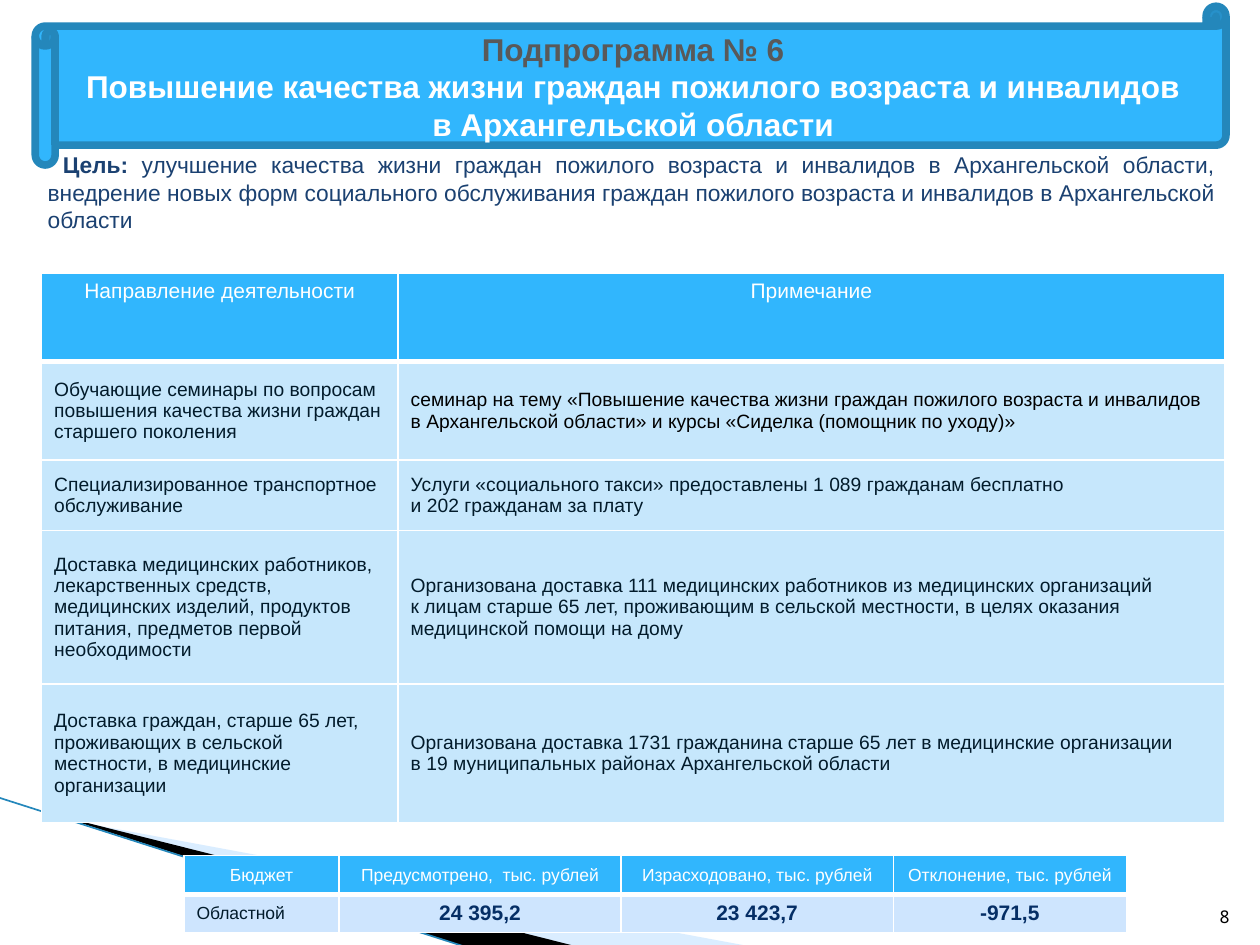
from dataclasses import dataclass
from typing import Optional

from lxml import etree
from pptx import Presentation
from pptx import util as u
from pptx.dml.color import RGBColor
from pptx.enum import shapes, text
from pptx.oxml.ns import qn


@dataclass(frozen=True)
class Theme:
    font: str = "Arial"
    number_font: str = "Noto Sans Mono"
    white: str = "FFFFFF"
    black: str = "000000"
    blue: str = "31B6FD"
    blue_edge: str = "2487BB"
    pale_blue: str = "C6E7FC"
    pale_budget: str = "CEE5FE"
    wedge: str = "A3D3FF"
    wedge_line: str = "99D0FF"
    grey: str = "595959"
    body: str = "021B2B"
    goal: str = "1B4171"
    amount: str = "052E65"
    title_size: float = 18
    goal_size: float = 13
    head_size: float = 12
    body_size: float = 11
    small_size: float = 10


T = Theme()
CENTER, LEFT = text.PP_ALIGN.CENTER, text.PP_ALIGN.LEFT
MIDDLE, TOP = text.MSO_ANCHOR.MIDDLE, text.MSO_ANCHOR.TOP


@dataclass(frozen=True)
class CellStyle:
    fill: str
    color: str
    size: float
    align: text.PP_ALIGN = LEFT
    anchor: text.MSO_ANCHOR = MIDDLE
    bold: bool = False
    bottom: float = 1


@dataclass(frozen=True)
class Cell:
    words: str
    style: CellStyle


@dataclass(frozen=True)
class Grid:
    left: float
    top: float
    cols: list[float]
    heights: list[float]
    rows: list[list[Cell]]


@dataclass(frozen=True)
class Wedge:
    points: list[tuple[float, float]]
    color: str
    alpha: Optional[int] = None


def rgb(color: str) -> RGBColor:
    return RGBColor.from_string(color)


def set_font(font, size: float, color: str, bold: bool = False, name: str = T.font) -> None:
    font.name, font.size, font.bold = name, u.Pt(size), bold
    font.color.rgb = rgb(color)


def draw_wedge(s, wedge: Wedge) -> None:
    pts = [(u.Inches(x), u.Inches(y)) for x, y in wedge.points]
    builder = s.shapes.build_freeform(*pts[0])
    builder.add_line_segments(pts[1:], close=True)
    sp = builder.convert_to_shape()
    sp.shadow.inherit = False
    sp.fill.solid()
    sp.fill.fore_color.rgb = rgb(wedge.color)
    sp.line.fill.background()
    if wedge.alpha is not None:
        clr = sp.element.spPr.find(qn("a:solidFill")).find(qn("a:srgbClr"))
        etree.SubElement(clr, qn("a:alpha"), val=str(wedge.alpha * 1000))


def set_borders(cell, bottom: float) -> None:
    tcPr = cell._tc.get_or_add_tcPr()
    for side, width in (("L", 1), ("R", 1), ("T", 1), ("B", bottom)):
        ln = etree.SubElement(tcPr, qn(f"a:ln{side}"), w=str(u.Pt(width)))
        fill = etree.SubElement(ln, qn("a:solidFill"))
        etree.SubElement(fill, qn("a:srgbClr"), val=T.white)


def draw_grid(s, grid: Grid) -> None:
    frame = s.shapes.add_table(
        len(grid.rows), len(grid.cols), u.Inches(grid.left), u.Inches(grid.top),
        u.Inches(sum(grid.cols)), u.Inches(sum(grid.heights)))
    table = frame.table
    for col, width in zip(table.columns, grid.cols):
        col.width = u.Inches(width)
    for row, height, items in zip(table.rows, grid.heights, grid.rows):
        row.height = u.Inches(height)
        for cell, item in zip(row.cells, items):
            style = item.style
            set_borders(cell, style.bottom)
            cell.fill.solid()
            cell.fill.fore_color.rgb = rgb(style.fill)
            cell.vertical_anchor = style.anchor
            p = cell.text_frame.paragraphs[0]
            p.text = item.words
            p.alignment = style.align
            set_font(p.font, style.size, style.color, style.bold)


HEAD = CellStyle(T.blue, T.white, T.head_size, CENTER, TOP, bottom=3)
BODY = CellStyle(T.pale_blue, T.body, T.body_size)
BLACK_BODY = CellStyle(T.pale_blue, T.black, T.body_size)
BUDGET_HEAD = CellStyle(T.blue, T.white, T.small_size, CENTER, bottom=3)
BUDGET_NAME = CellStyle(T.pale_budget, T.body, T.small_size)
AMOUNT = CellStyle(T.pale_budget, T.amount, T.head_size, CENTER, bold=True)

WEDGES = [
    Wedge([(0.55, 6.51), (5.95, 7.51), (4.56, 7.51), (0.55, 6.5)], T.wedge, 40),
    Wedge([(0.53, 6.49), (4.57, 7.51), (3.72, 7.52), (0.54, 6.5)], T.black),
]
TITLE = [
    ("Подпрограмма № 6", T.grey),
    ("Повышение качества жизни граждан пожилого возраста и инвалидов", T.white),
    ("в Архангельской области", T.white),
]
ACTIVITIES = Grid(0.33, 2.17, [2.83, 6.56], [0.7, 0.78, 0.56, 1.22, 1.1], [
    [Cell("Направление деятельности", HEAD), Cell("Примечание", HEAD)],
    [Cell("Обучающие семинары по вопросам повышения качества жизни граждан старшего поколения", BODY),
     Cell("семинар на тему «Повышение качества жизни граждан пожилого возраста и инвалидов "
          "в Архангельской области» и курсы «Сиделка (помощник по уходу)»", BLACK_BODY)],
    [Cell("Специализированное транспортное обслуживание", BODY),
     Cell("Услуги «социального такси» предоставлены 1 089 гражданам бесплатно\n"
          "и 202 гражданам за плату", BODY)],
    [Cell("Доставка медицинских работников, лекарственных средств, медицинских изделий, "
          "продуктов питания, предметов первой необходимости", BODY),
     Cell("Организована доставка 111 медицинских работников из медицинских организаций\n"
          "к лицам старше 65 лет, проживающим в сельской местности, в целях оказания "
          "медицинской помощи на дому", BODY)],
    [Cell("Доставка граждан, старше 65 лет, проживающих в сельской местности, "
          "в медицинские организации", BODY),
     Cell("Организована доставка 1731 гражданина старше 65 лет в медицинские организации\n"
          "в 19 муниципальных районах Архангельской области", BODY)],
])
BUDGET = Grid(1.46, 6.79, [1.23, 2.24, 2.16, 1.85], [0.31, 0.3], [
    [Cell(words, BUDGET_HEAD) for words in (
        "Бюджет", "Предусмотрено,  тыс. рублей", "Израсходовано, тыс. рублей",
        "Отклонение, тыс. рублей")],
    [Cell("Областной", BUDGET_NAME)]
    + [Cell(words, AMOUNT) for words in ("24 395,2", "23 423,7", "-971,5")],
])


def main() -> None:
    prs = Presentation()
    prs.slide_width, prs.slide_height = u.Inches(10), u.Inches(7.5)
    s = prs.slides.add_slide(prs.slide_layouts[5])

    # Corner decoration
    for wedge in WEDGES:
        draw_wedge(s, wedge)
    edge = s.shapes.add_connector(
        shapes.MSO_CONNECTOR.STRAIGHT, u.Inches(-0.01), u.Inches(6.33), u.Inches(3.71), u.Inches(7.52))
    edge.line.color.rgb = rgb(T.blue_edge)
    edge.line.width = u.Pt(0.95)
    etree.SubElement(edge.element.spPr, qn("a:effectLst"))

    # Scroll banner with the title on it
    scroll = s.shapes.add_shape(
        shapes.MSO_SHAPE.HORIZONTAL_SCROLL, u.Inches(0.28), u.Inches(0.05), u.Inches(9.45), u.Inches(1.26))
    scroll.shadow.inherit = False
    scroll.fill.solid()
    scroll.fill.fore_color.rgb = rgb(T.blue)
    scroll.line.color.rgb = rgb(T.blue_edge)
    scroll.line.width = u.Pt(4.33)
    title = s.shapes.title
    scroll.element.addnext(title.element)
    title.left, title.top = u.Inches(0.44), u.Inches(0.21)
    title.width, title.height = u.Inches(9.17), u.Inches(0.95)
    tf = title.text_frame
    tf.margin_top = tf.margin_bottom = 0
    tf.vertical_anchor = MIDDLE
    tf.auto_size = text.MSO_AUTO_SIZE.NONE
    tf.text = "\n".join(words for words, _ in TITLE)
    for p, (_, color) in zip(tf.paragraphs, TITLE):
        p.alignment = CENTER
        set_font(p.font, T.title_size, color, True)

    # Goal
    goal = s.shapes.add_textbox(u.Inches(0.28), u.Inches(1.15), u.Inches(9.45), u.Inches(0.81))
    goal.text_frame.word_wrap = True
    p = goal.text_frame.paragraphs[0]
    p.alignment = text.PP_ALIGN.JUSTIFY
    p._p.get_or_add_pPr().set("indent", str(u.Inches(0.12)))
    for words, bold in (("Цель: ", True), (
            "улучшение качества жизни граждан пожилого возраста и инвалидов в Архангельской области, "
            "внедрение новых форм социального обслуживания граждан пожилого возраста и инвалидов "
            "в Архангельской области", False)):
        r = p.add_run()
        r.text = words
        set_font(r.font, T.goal_size, T.goal, bold)

    # Activities, slide number, budget
    draw_grid(s, ACTIVITIES)
    number = s.shapes.add_textbox(u.Inches(9.46), u.Inches(7.01), u.Inches(0.4), u.Inches(0.4))
    number.text_frame.word_wrap = True
    number.text_frame.vertical_anchor = text.MSO_ANCHOR.BOTTOM
    p = number.text_frame.paragraphs[0]
    p.text = "8"
    p.alignment = text.PP_ALIGN.RIGHT
    set_font(p.font, T.small_size, T.black, name=T.number_font)
    draw_grid(s, BUDGET)

    prs.save("out.pptx")


if __name__ == "__main__":
    main()
